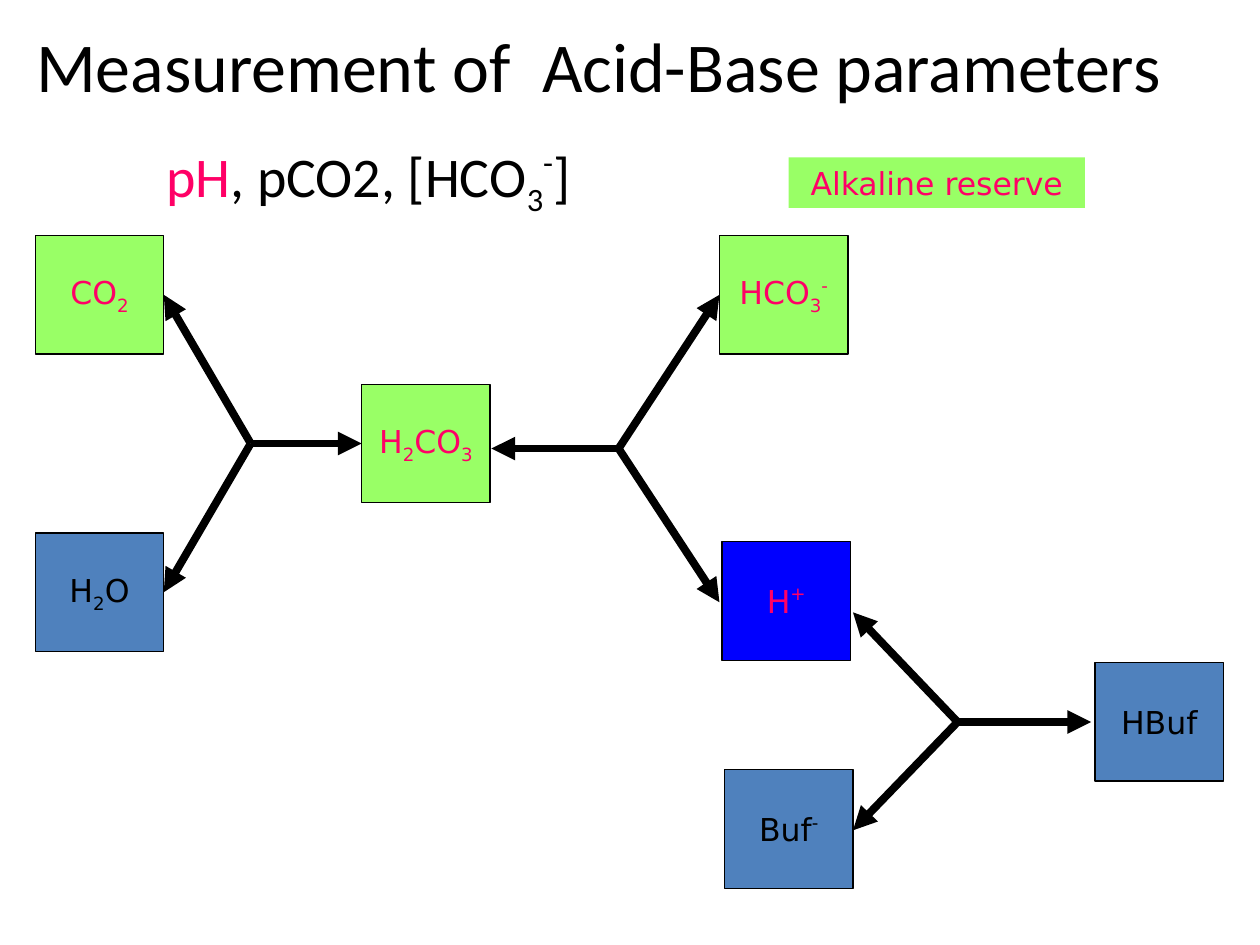
from pptx import Presentation
from pptx.dml.color import RGBColor
from pptx.enum.shapes import MSO_CONNECTOR, MSO_SHAPE
from pptx.enum.text import MSO_ANCHOR, PP_ALIGN
from pptx.oxml.ns import qn
from pptx.util import Inches, Pt
from lxml import etree

RECT = MSO_SHAPE.RECTANGLE
LINE = MSO_CONNECTOR.STRAIGHT
LEFT, CENTER = PP_ALIGN.LEFT, PP_ALIGN.CENTER
TOP, MIDDLE = MSO_ANCHOR.TOP, MSO_ANCHOR.MIDDLE

BLACK, PINK = "000000", "FF0066"
GREEN, BLUE, STEEL = "99FF66", "0000FF", "4F81BD"
SHIFT = {"_": "-25000", "^": "40000"}
BOX_W, BOX_H = 1.02, 0.94

BOXES = [
    ("CO|_2", 0.28, 1.87, GREEN, PINK),
    ("H|_2|O", 0.28, 4.23, STEEL, BLACK),
    ("H|_2|CO|_3", 2.87, 3.05, GREEN, PINK),
    ("HCO|_3|^-", 5.71, 1.87, GREEN, PINK),
    ("H|^+", 5.73, 4.3, BLUE, PINK),
    ("Buf|^-", 5.75, 6.11, STEEL, BLACK),
    ("HBuf", 8.69, 5.26, STEEL, BLACK),
]

FORKS = [
    ((1.99, 3.52), [(1.3, 4.7), (1.3, 2.34), (2.87, 3.52)]),
    ((4.91, 3.56), [(5.71, 4.78), (5.71, 2.34), (3.9, 3.56)]),
    ((7.6, 5.73), [(6.77, 6.59), (6.77, 4.86), (8.66, 5.73)]),
]


def paint(fmt, color):
    fmt.solid()
    fmt.fore_color.rgb = RGBColor.from_string(color)


def write(shape, text, color=BLACK, lead=None, size=18, font="DejaVu Sans",
          align=CENTER, anchor=MIDDLE, wrap=True, before=0):
    frame = shape.text_frame
    frame.word_wrap = wrap
    frame.vertical_anchor = anchor
    para = frame.paragraphs[0]
    para.alignment = align
    para.space_before = Pt(before)
    for i, part in enumerate(text.split("|")):
        run = para.add_run()
        run.text = part.lstrip("_^")
        run.font.name = font
        run.font.size = Pt(size)
        paint(run.font.fill, lead if lead and i == 0 else color)
        if part[0] in SHIFT:
            run.font._element.set("baseline", SHIFT[part[0]])


def add_box(slide, x, y, w, h, fill, edge=None):
    box = slide.shapes.add_shape(RECT, Inches(x), Inches(y), Inches(w), Inches(h))
    box.shadow.inherit = False
    paint(box.fill, fill)
    if edge:
        paint(box.line.fill, edge)
        box.line.width = Pt(0.75)
    else:
        box.line.fill.background()
    return box


def add_fork(slide, hub, tips):
    group = slide.shapes.add_group_shape()
    for tip in tips:
        arm = group.shapes.add_connector(LINE, *map(Inches, hub + tip))
        paint(arm.line.fill, BLACK)
        arm.line.width = Pt(4.5)
        etree.SubElement(arm.line._get_or_add_ln(), qn("a:tailEnd"), type="triangle")
        etree.SubElement(arm._element.spPr, qn("a:effectLst"))


def add_head(slide, x, y, w, h):
    title = slide.shapes.title
    title.left, title.top = Inches(x), Inches(y)
    title.width, title.height = Inches(w), Inches(h)
    write(title, "Measurement of  Acid-Base parameters", size=40, font="Calibri")


def add_key(slide, x, y, w, h):
    area = slide.shapes.add_textbox(Inches(x), Inches(y), Inches(w), Inches(h))
    write(area, "pH|, pCO2, [HCO|_3|^-|]", lead=PINK, size=32, font="Calibri",
          align=LEFT, anchor=TOP, before=6.4)


def add_chain(slide):
    for text, x, y, fill, color in BOXES:
        box = add_box(slide, x, y, BOX_W, BOX_H, fill, BLACK)
        write(box, text, color, wrap=False)
    for hub, tips in FORKS:
        add_fork(slide, hub, tips)


def main():
    deck = Presentation()
    deck.slide_width, deck.slide_height = Inches(10), Inches(7.5)
    slide = deck.slides.add_slide(deck.slide_layouts[5])
    add_head(slide, 0, -0.11, 9.5, 1.25)
    add_key(slide, 1.22, 1.07, 8.7, 0.71)
    add_chain(slide)
    note = add_box(slide, 6.26, 1.25, 2.35, 0.4, GREEN)
    write(note, "Alkaline reserve", PINK)
    deck.save("out.pptx")


if __name__ == "__main__":
    main()
